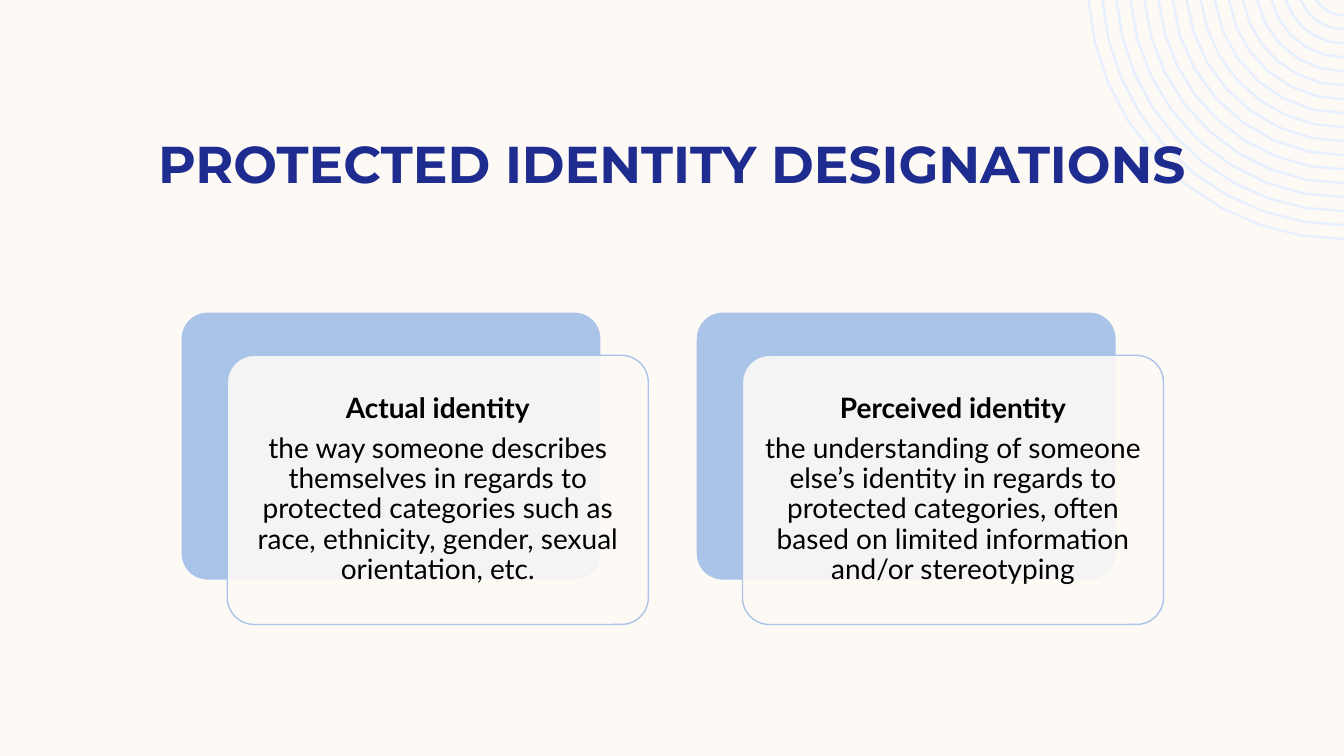
from math import asin, cos, pi, sin

from lxml import etree
from pptx import Presentation
from pptx.dml.color import RGBColor
from pptx.enum.shapes import MSO_SHAPE
from pptx.enum.text import MSO_ANCHOR, PP_ALIGN
from pptx.oxml.ns import qn
from pptx.util import Inches, Pt

ROUND = MSO_SHAPE.ROUNDED_RECTANGLE
CENTER = PP_ALIGN.CENTER
TOP, MIDDLE = MSO_ANCHOR.TOP, MSO_ANCHOR.MIDDLE

WIDE, HIGH = Inches(13.33), Inches(7.5)
COLORS = {"paper": "FDFAF6", "navy": "1F2C8F", "blue": "AAC3E8",
          "pale": "E6F0FE", "black": "000000"}
CARDS = [
    ("Actual identity",
     "the way someone describes themselves in regards to protected categories "
     "such as race, ethnicity, gender, sexual orientation, etc."),
    ("Perceived identity",
     "the understanding of someone else’s identity in regards to protected "
     "categories, often based on limited information and/or stereotyping"),
]


def color(name):
    return RGBColor.from_string(COLORS[name])


def area(x, y, w, h):
    """Turn percentages of the slide into a box."""
    return [int(v * side / 100)
            for v, side in zip((x, y, w, h), (WIDE, HIGH, WIDE, HIGH))]


def style(para, font, size, ink, bold):
    para.alignment = CENTER
    para.line_spacing = 0.9
    for run in para.runs:
        run.font.name = font
        run.font.size = Pt(size)
        run.font.bold = bold
        run.font.color.rgb = color(ink)


def add_rings(slide, box, count=17):
    """Concentric arcs around a point just above the top right corner."""
    x, y, w, h = box
    mid, top = x + w, y - 0.07 * h
    gap = h / 17.2

    def arc(radius, steps):
        start = asin((y - top) / radius)
        turns = [start + (pi / 2 - start) * i / steps for i in range(steps + 1)]
        return [(int(mid - radius * cos(t)), int(top + radius * sin(t)))
                for t in turns]

    pen = None
    for i in range(count):
        outer = y + h - top - i * gap
        steps = 9 - i * 6 // count  # small arcs need fewer points
        points = arc(outer, steps) + arc(outer - 0.18 * gap, steps)[::-1]
        if pen is None:
            pen = slide.shapes.build_freeform(*points[0])
        else:
            pen.move_to(*points[0])
        pen.add_line_segments(points[1:], close=True)
    rings = pen.convert_to_shape()
    rings.shadow.inherit = False
    rings.fill.solid()
    rings.fill.fore_color.rgb = color("pale")
    rings.line.fill.background()


def add_text(parent, box, text, anchor):
    frame = parent.shapes.add_textbox(*box).text_frame
    frame.word_wrap = True
    frame.vertical_anchor = anchor
    frame.text = text
    return frame


def add_title(slide, box, text):
    frame = add_text(slide, box, text, TOP)
    style(frame.paragraphs[0], "Montserrat", 37, "navy", True)


def add_panel(group, box, fill, edge, weight):
    panel = group.shapes.add_shape(ROUND, *box)
    panel.adjustments[0] = 0.1
    panel.shadow.inherit = False
    panel.fill.solid()
    panel.fill.fore_color.rgb = color(fill)
    panel.line.color.rgb = color(edge)
    panel.line.width = Pt(weight)
    return panel


def add_card(slide, box, head, body):
    """A blue plate with a translucent text panel set down and right."""
    x, y, w, h = box
    wide, high = int(0.9 * w), int(0.86 * h)
    left, top = x + w - wide, y + h - high
    group = slide.shapes.add_group_shape()
    add_panel(group, (x, y, wide, high), "blue", "paper", 1.5)
    panel = add_panel(group, (left, top, wide, high), "paper", "blue", 1)
    tint = panel.fill._xPr.find(qn("a:solidFill"))[0]
    etree.SubElement(tint, qn("a:alpha")).set("val", "90000")

    pad = Inches(0.08)
    inner = left + pad, top + pad, wide - 2 * pad, high - 2 * pad
    frame = add_text(group, inner, f"{head}\n{body}", MIDDLE)
    frame.margin_left = frame.margin_right = pad
    frame.margin_top = frame.margin_bottom = pad
    for para, bold in zip(frame.paragraphs, (True, False)):
        style(para, "Lato", 20, "black", bold)
        para.space_after = Pt(7)


def main():
    deck = Presentation()
    deck.slide_width, deck.slide_height = WIDE, HIGH
    slide = deck.slides.add_slide(deck.slide_layouts[6])
    slide.background.fill.solid()
    slide.background.fill.fore_color.rgb = color("paper")

    # Corner ornament and heading
    add_rings(slide, area(80.95, 0, 19.05, 31.8))
    add_title(slide, area(6.25, 17.73, 87.5, 11.2),
              "PROTECTED IDENTITY DESIGNATIONS")

    # Two cards side by side
    for i, (head, body) in enumerate(CARDS):
        add_card(slide, area(13.43 + 38.33 * i, 41.2, 34.81, 41.4), head, body)

    deck.save("out.pptx")


if __name__ == "__main__":
    main()
